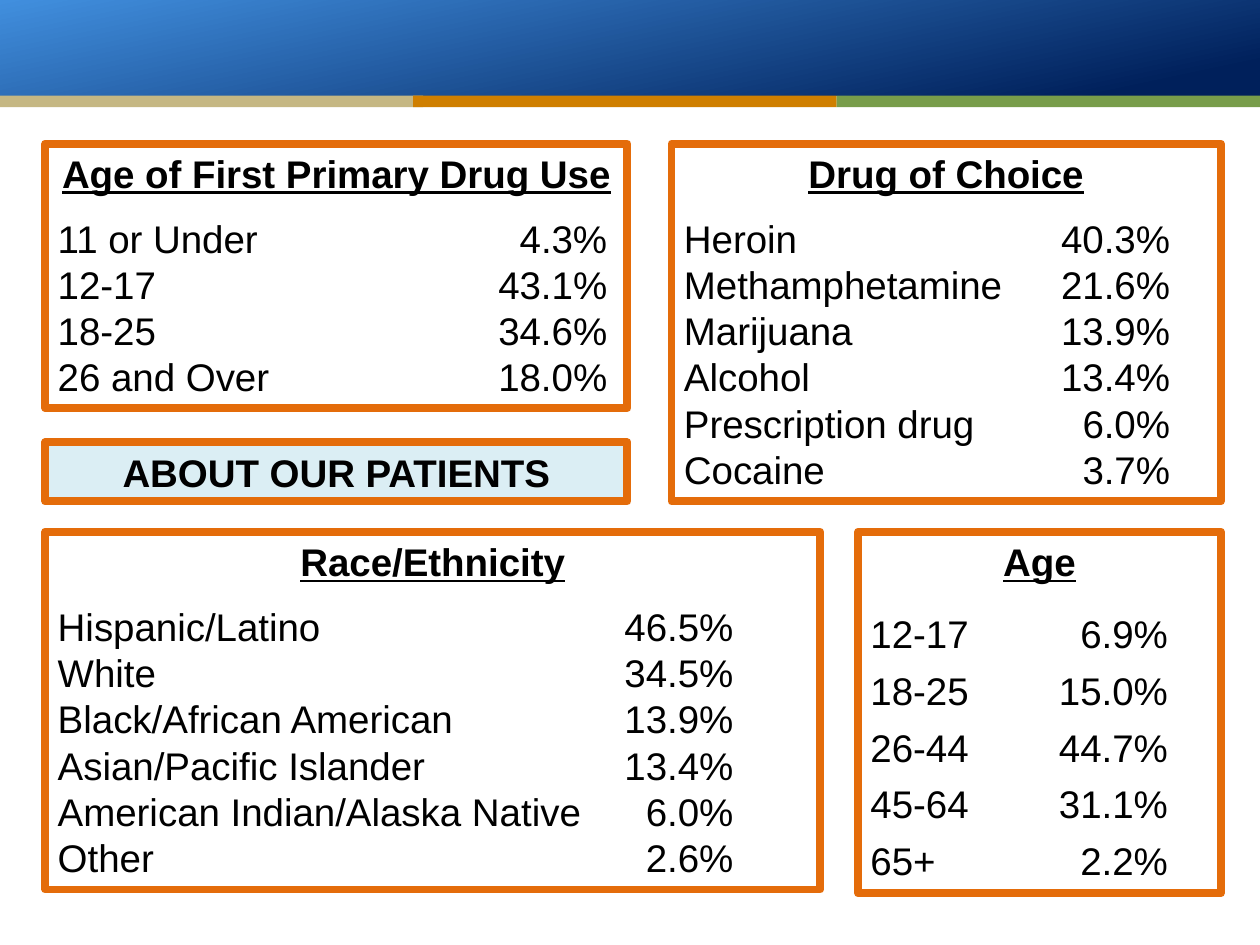
from lxml.etree import SubElement
from pptx import Presentation
from pptx.dml.color import RGBColor
from pptx.enum.shapes import MSO_SHAPE
from pptx.enum.text import MSO_ANCHOR, MSO_AUTO_SIZE, PP_ALIGN
from pptx.oxml.ns import qn
from pptx.util import Inches, Pt

NAVY = RGBColor(0x00, 0x20, 0x5B)
SKY = RGBColor(0x41, 0x8F, 0xDE)
STRIPES = [RGBColor(0xC5, 0xB7, 0x83), RGBColor(0xCF, 0x7F, 0x00),
           RGBColor(0x78, 0x9D, 0x4A)]
ORANGE = RGBColor(0xE4, 0x6C, 0x0A)
PALE_BLUE = RGBColor(0xDB, 0xEE, 0xF4)
BLACK = RGBColor(0, 0, 0)

SLIDE_W, SLIDE_H = Inches(10), Inches(7.5)

# Heading, box in percent of the slide, value edge as a share of the box width,
# space after the heading, space around each row, rows
PANELS = [
    ("Drug of Choice", (53.3, 15.2, 43.6, 37.87), 0.885, 10.8, 0,
     [("Heroin", "40.3%"), ("Methamphetamine", "21.6%"), ("Marijuana", "13.9%"),
      ("Alcohol", "13.4%"), ("Prescription drug", "6.0%"), ("Cocaine", "3.7%")]),
    ("Race/Ethnicity", (3.6, 56.27, 61.5, 37.87), 0.872, 10.8, 0,
     [("Hispanic/Latino", "46.5%"), ("White", "34.5%"),
      ("Black/African American", "13.9%"), ("Asian/Pacific Islander", "13.4%"),
      ("American Indian/Alaska Native", "6.0%"), ("Other", "2.6%")]),
    ("Age", (68.1, 56.27, 28.8, 38.27), 0.82, 12, 3,
     [("12-17", "6.9%"), ("18-25", "15.0%"), ("26-44", "44.7%"),
      ("45-64", "31.1%"), ("65+", "2.2%")]),
    ("Age of First Primary Drug Use", (3.6, 15.2, 46.2, 28), 0.944, 10.8, 0,
     [("11 or Under", "4.3%"), ("12-17", "43.1%"), ("18-25", "34.6%"),
      ("26 and Over", "18.0%")]),
]
TITLE_BOX = (3.6, 46.8, 46.2, 6.27)


def to_emu(box):
    """Turn a box in percent of the slide into left, top, width, height."""
    x, y, w, h = box
    return (int(SLIDE_W * x / 100), int(SLIDE_H * y / 100),
            int(SLIDE_W * w / 100), int(SLIDE_H * h / 100))


def add_rect(slide, box):
    sp = slide.shapes.add_shape(MSO_SHAPE.RECTANGLE, *to_emu(box))
    sp.shadow.inherit = False
    return sp


def outline(sp):
    sp.line.color.rgb = ORANGE
    sp.line.width = Pt(4.5)
    SubElement(sp.line._get_or_add_ln(), qn("a:round"))


def set_frame(tf, anchor):
    tf.word_wrap = True
    tf.auto_size = MSO_AUTO_SIZE.NONE
    tf.vertical_anchor = anchor
    tf.margin_left = tf.margin_right = Inches(0.1)
    tf.margin_top = tf.margin_bottom = Inches(0.05)


def format_runs(p, bold=False, underline=False):
    for r in p.runs:
        r.font.name = "Arial"
        r.font.size = Pt(22)
        r.font.bold = bold
        r.font.underline = underline
        r.font.color.rgb = BLACK


def add_right_tab(p, pos):
    tabs = SubElement(p._p.get_or_add_pPr(), qn("a:tabLst"))
    SubElement(tabs, qn("a:tab"), pos=str(pos), algn="r")


def add_banner(slide, band_h, stripe_h):
    band = add_rect(slide, (0, 0, 100, band_h))
    band.line.fill.background()
    band.fill.gradient()
    band.fill.gradient_angle = 102
    dark, light = band.fill.gradient_stops
    dark.color.rgb, dark.position = NAVY, 0.09
    light.color.rgb, light.position = SKY, 1
    stripe_w = 33.6
    for i, color in enumerate(STRIPES):
        left = i * (100 - stripe_w) / 2 - (0.4 if i == 1 else 0)
        stripe = add_rect(slide, (left, band_h, stripe_w, stripe_h))
        stripe.fill.solid()
        stripe.fill.fore_color.rgb = color
        stripe.line.fill.background()


def add_panel(slide, heading, box, value_edge, gap, row_space, rows):
    sp = add_rect(slide, box)
    sp.fill.background()
    outline(sp)
    tf = sp.text_frame
    set_frame(tf, MSO_ANCHOR.TOP)
    p = tf.paragraphs[0]
    p.text = heading
    p.alignment = PP_ALIGN.CENTER
    p.space_after = Pt(gap)
    format_runs(p, bold=True, underline=True)
    for label, value in rows:
        p = tf.add_paragraph()
        p.text = f"{label}\t{value}"
        p.alignment = PP_ALIGN.LEFT
        p.space_before = p.space_after = Pt(row_space)
        add_right_tab(p, int(sp.width * value_edge))
        format_runs(p)


def place_title(slide, text, box):
    title = slide.shapes.title
    title.left, title.top, title.width, title.height = to_emu(box)
    title.fill.solid()
    title.fill.fore_color.rgb = PALE_BLUE
    outline(title)
    title.text_frame.text = text
    set_frame(title.text_frame, MSO_ANCHOR.MIDDLE)
    p = title.text_frame.paragraphs[0]
    p.alignment = PP_ALIGN.CENTER
    format_runs(p, bold=True)


def main():
    prs = Presentation()
    prs.slide_width, prs.slide_height = SLIDE_W, SLIDE_H
    slide = prs.slides.add_slide(prs.slide_layouts[5])
    add_banner(slide, band_h=10.13, stripe_h=1.2)
    for panel in PANELS:
        add_panel(slide, *panel)
    place_title(slide, "ABOUT OUR PATIENTS", TITLE_BOX)
    prs.save("out.pptx")


if __name__ == "__main__":
    main()
